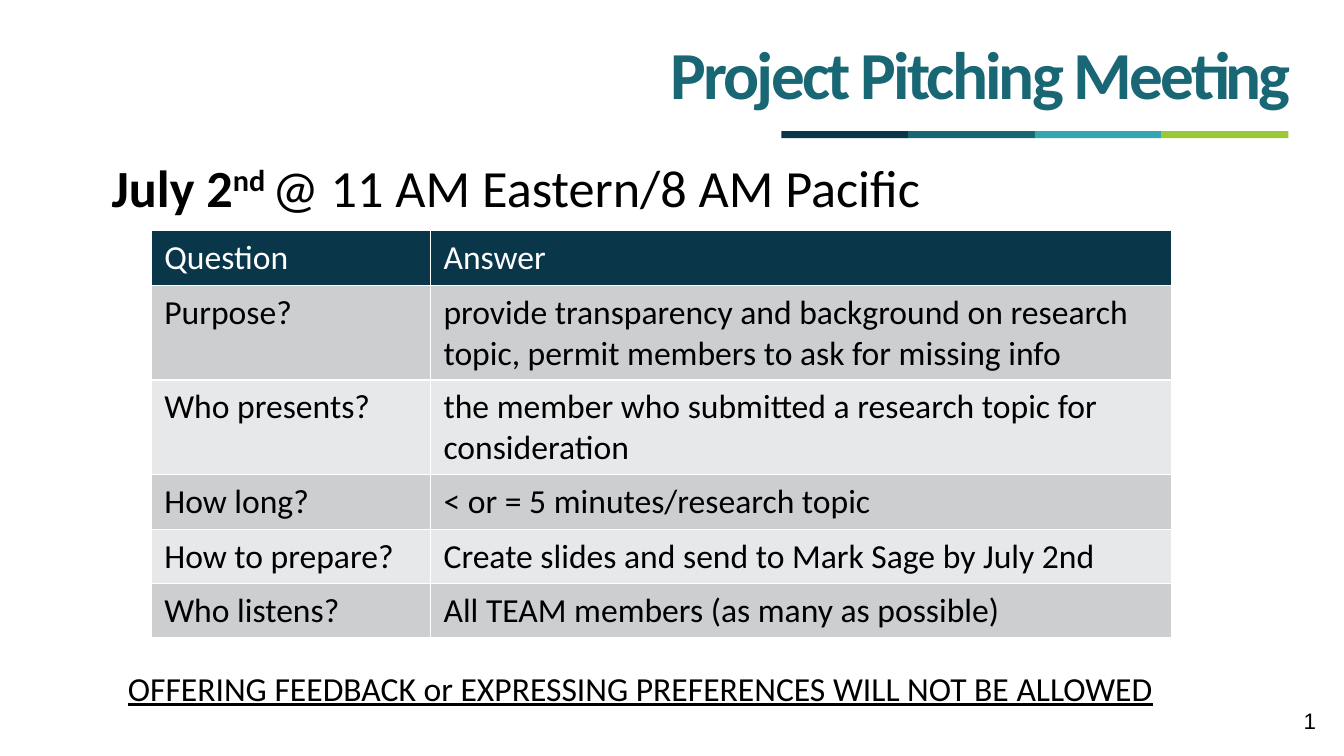
from dataclasses import dataclass

from lxml import etree
from pptx import Presentation
from pptx import util as u
from pptx.dml.color import RGBColor
from pptx.enum import shapes, text
from pptx.oxml import ns


@dataclass(frozen=True)
class Theme:
    font: str = "Calibri"
    number_font: str = "Arial"
    navy: str = "0A364A"
    teal: str = "196674"
    aqua: str = "33A6B2"
    lime: str = "9AC836"
    black: str = "000000"
    white: str = "FFFFFF"
    band_dark: str = "CCCED0"
    band_light: str = "E7E8E9"
    title_size: float = 48
    heading_size: float = 37.3
    body_size: float = 24
    number_size: float = 16


@dataclass(frozen=True)
class Box:
    left: float
    top: float
    width: float
    height: float

    def lengths(self) -> tuple:
        return tuple(u.Inches(n) for n in (self.left, self.top, self.width, self.height))


@dataclass(frozen=True)
class Entry:
    question: str
    answer: str
    height: float = 0.54


THEME = Theme()
TITLE_BOX = Box(6.55, 0.27, 6.73, 0.91)
RULE_BOX = Box(7.75, 1.3, 5.03, 0.07)
HEADING_BOX = Box(1.01, 1.56, 11.5, 0.7)
TABLE_BOX = Box(1.5, 2.29, 10.12, 4.03)
WARNING_BOX = Box(1.17, 6.62, 11.3, 0.5)
NUMBER_BOX = Box(10.15, 6.95, 3, 0.4)
COLUMN_WIDTHS = (2.77, 7.35)
RULE_COLOURS = (THEME.navy, THEME.teal, THEME.aqua, THEME.lime)
ENTRIES = (
    Entry("Question", "Answer"),
    Entry("Purpose?", "provide transparency and background on research topic, "
          "permit members to ask for missing info", 0.93),
    Entry("Who presents?", "the member who submitted a research topic for consideration", 0.93),
    Entry("How long?", "< or = 5 minutes/research topic"),
    Entry("How to prepare?", "Create slides and send to Mark Sage by July 2nd"),
    Entry("Who listens?", "All TEAM members (as many as possible)"),
)


def style(paragraph, size: float, colour: str = THEME.black, font: str = THEME.font) -> None:
    paragraph.font.name = font
    paragraph.font.size = u.Pt(size)
    paragraph.font.color.rgb = RGBColor.from_string(colour)


def add_text(slide, box: Box):
    frame = slide.shapes.add_textbox(*box.lengths()).text_frame
    frame.word_wrap = True
    return frame


def draw_title(slide) -> None:
    title = slide.shapes.title
    title.left, title.top, title.width, title.height = TITLE_BOX.lengths()
    frame = title.text_frame
    frame.word_wrap = False
    frame.auto_size = text.MSO_AUTO_SIZE.NONE
    frame.vertical_anchor = text.MSO_ANCHOR.MIDDLE
    paragraph = frame.paragraphs[0]
    run = paragraph.add_run()
    run.text = "Project Pitching Meeting"
    run._r.get_or_add_rPr().set("spc", "-200")
    paragraph.alignment = text.PP_ALIGN.LEFT
    style(paragraph, THEME.title_size, THEME.teal)
    paragraph.font.bold = True


def draw_rule(slide) -> None:
    width = RULE_BOX.width / len(RULE_COLOURS)
    for index, colour in enumerate(RULE_COLOURS):
        box = Box(RULE_BOX.left + index * width, RULE_BOX.top, width, RULE_BOX.height)
        segment = slide.shapes.add_shape(shapes.MSO_SHAPE.RECTANGLE, *box.lengths())
        segment.shadow.inherit = False
        segment.fill.solid()
        segment.fill.fore_color.rgb = RGBColor.from_string(colour)
        segment.line.fill.background()


def draw_heading(slide) -> None:
    paragraph = add_text(slide, HEADING_BOX).paragraphs[0]
    paragraph.line_spacing = 0.9
    style(paragraph, THEME.heading_size)
    date, ordinal, time = (paragraph.add_run() for _ in range(3))
    date.text, ordinal.text, time.text = "July 2", "nd ", "@ 11 AM Eastern/8 AM Pacific"
    date.font.bold = ordinal.font.bold = True
    ordinal._r.get_or_add_rPr().set("baseline", "30000")


def border_cell(cell) -> None:
    properties = cell._tc.get_or_add_tcPr()
    for position, side in enumerate(("lnL", "lnR", "lnT", "lnB")):
        line = etree.Element(ns.qn(f"a:{side}"), w=str(u.Pt(1)))
        fill = etree.SubElement(line, ns.qn("a:solidFill"))
        etree.SubElement(fill, ns.qn("a:srgbClr"), val=THEME.white)
        properties.insert(position, line)


def fill_cell(cell, words: str, fill: str, colour: str) -> None:
    cell.text = words
    cell.margin_left = cell.margin_right = u.Inches(0.13)
    cell.margin_top = cell.margin_bottom = u.Inches(0.07)
    cell.fill.solid()
    cell.fill.fore_color.rgb = RGBColor.from_string(fill)
    style(cell.text_frame.paragraphs[0], THEME.body_size, colour)
    cell.text_frame.paragraphs[0].font.bold = False
    border_cell(cell)


def draw_table(slide) -> None:
    table = slide.shapes.add_table(len(ENTRIES), len(COLUMN_WIDTHS), *TABLE_BOX.lengths()).table
    for column, width in zip(table.columns, COLUMN_WIDTHS):
        column.width = u.Inches(width)
    for index, (row, entry) in enumerate(zip(table.rows, ENTRIES)):
        row.height = u.Inches(entry.height)
        band = THEME.band_dark if index % 2 else THEME.band_light
        fill, colour = (band, THEME.black) if index else (THEME.navy, THEME.white)
        for cell, words in zip(row.cells, (entry.question, entry.answer)):
            fill_cell(cell, words, fill, colour)


def draw_warning(slide) -> None:
    paragraph = add_text(slide, WARNING_BOX).paragraphs[0]
    paragraph.text = "OFFERING FEEDBACK or EXPRESSING PREFERENCES WILL NOT BE ALLOWED"
    paragraph.line_spacing = 0.9
    style(paragraph, THEME.body_size)
    paragraph.font.underline = True


def draw_number(slide) -> None:
    frame = add_text(slide, NUMBER_BOX)
    frame.vertical_anchor = text.MSO_ANCHOR.MIDDLE
    paragraph = frame.paragraphs[0]
    paragraph.text = "1"
    paragraph.alignment = text.PP_ALIGN.RIGHT
    style(paragraph, THEME.number_size, font=THEME.number_font)


def main() -> None:
    presentation = Presentation()
    presentation.slide_width, presentation.slide_height = u.Inches(13.33), u.Inches(7.5)
    slide = presentation.slides.add_slide(presentation.slide_layouts[5])
    for draw in (draw_title, draw_rule, draw_heading, draw_table, draw_warning, draw_number):
        draw(slide)
    presentation.save("out.pptx")


if __name__ == "__main__":
    main()
